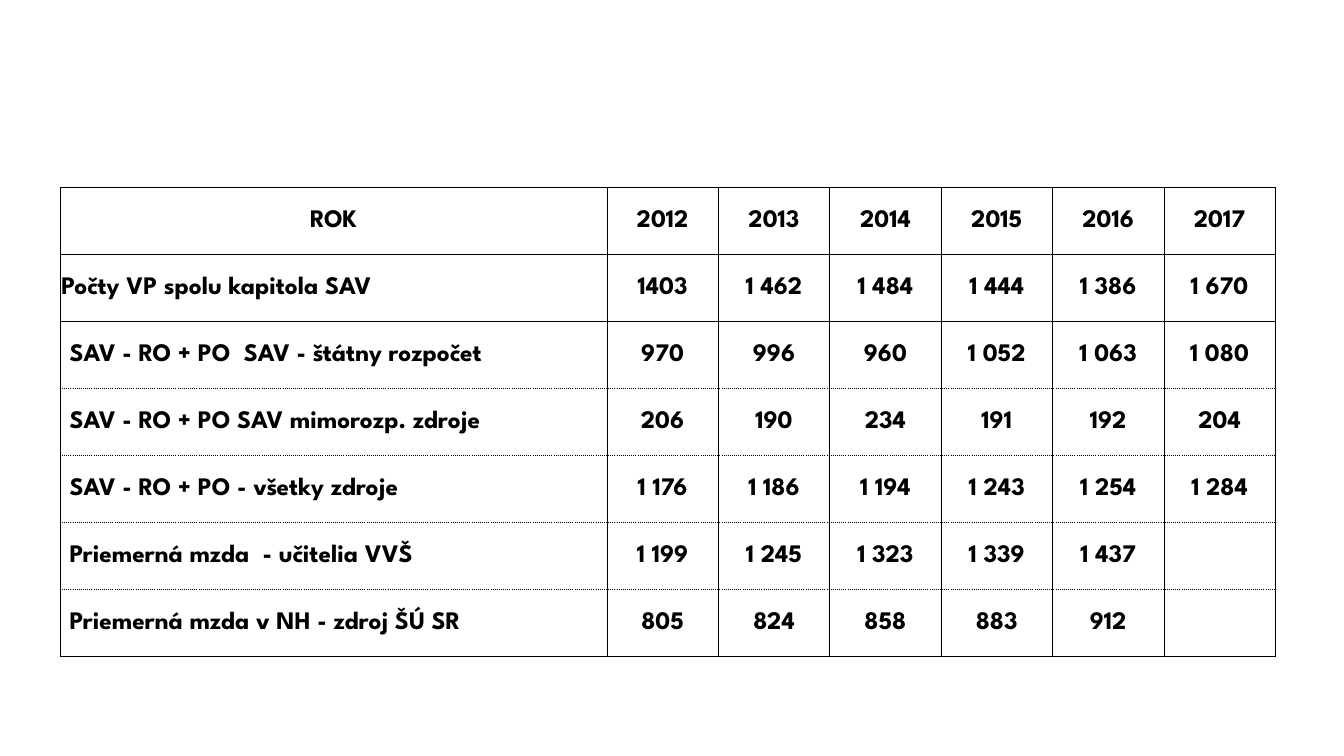
from lxml import etree
from pptx import Presentation
from pptx.dml.color import RGBColor
from pptx.enum.text import MSO_ANCHOR, PP_ALIGN
from pptx.oxml.ns import qn
from pptx.util import Inches, Pt

LEFT, CENTER = PP_ALIGN.LEFT, PP_ALIGN.CENTER
MIDDLE = MSO_ANCHOR.MIDDLE

BLACK, WHITE = "000000", "FFFFFF"
THICK, THIN, DOTTED = (1, "solid"), (0.5, "solid"), (0.5, "sysDot")

HEADER = ["ROK", "2012", "2013", "2014", "2015", "2016", "2017"]
TOTALS = ["Počty VP spolu kapitola SAV",
          "1403", "1 462", "1 484", "1 444", "1 386", "1 670"]
DETAILS = [
    ["SAV - RO + PO  SAV - štátny rozpočet",
     "970", "996", "960", "1 052", "1 063", "1 080"],
    ["SAV - RO + PO SAV mimorozp. zdroje",
     "206", "190", "234", "191", "192", "204"],
    ["SAV - RO + PO - všetky zdroje",
     "1 176", "1 186", "1 194", "1 243", "1 254", "1 284"],
    ["Priemerná mzda  - učitelia VVŠ",
     "1 199", "1 245", "1 323", "1 339", "1 437", ""],
    ["Priemerná mzda v NH - zdroj ŠÚ SR",
     "805", "824", "858", "883", "912", ""],
]


def color(hex_value):
    return RGBColor.from_string(hex_value)


def write_text(text_frame, text, *, font, size, bold, hex_value, align):
    paragraph = text_frame.paragraphs[0]
    paragraph.alignment = align
    paragraph.font.size = Pt(size)
    if text:
        run = paragraph.add_run()
        run.text = text
        run.font.name = font
        run.font.size = Pt(size)
        run.font.bold = bold
        run.font.color.rgb = color(hex_value)


class SlideBuilder:
    font = "League Spartan"
    size = 18
    margin = 0.01
    detail_indent = 0.08

    def __init__(self, presentation):
        self.slide = presentation.slides.add_slide(presentation.slide_layouts[6])
        background = self.slide.background.fill
        background.solid()
        background.fore_color.rgb = color(WHITE)

    def border(self, cell, side, style):
        width, dash = style
        properties = cell._tc.get_or_add_tcPr()
        line = etree.SubElement(properties, qn(f"a:ln{side}"), w=str(Pt(width)))
        fill = etree.SubElement(line, qn("a:solidFill"))
        etree.SubElement(fill, qn("a:srgbClr"), val=BLACK)
        etree.SubElement(line, qn("a:prstDash"), val=dash)

    def cell(self, cell, text, align, indent, borders):
        cell.vertical_anchor = MIDDLE
        cell.margin_left = Inches(self.margin + indent)
        cell.margin_right = cell.margin_top = Inches(self.margin)
        cell.margin_bottom = 0
        # Borders come before the fill in the cell properties
        for side, style in borders.items():
            self.border(cell, side, style)
        cell.fill.solid()
        cell.fill.fore_color.rgb = color(WHITE)
        write_text(cell.text_frame, text, font=self.font, size=self.size,
                   bold=True, hex_value=BLACK, align=align)

    def table(self, rows, left, top, width, height, label_width, solid_lines):
        row_count, column_count = len(rows), len(rows[0])
        table = self.slide.shapes.add_table(
            row_count, column_count, Inches(left), Inches(top),
            Inches(width), Inches(height)).table
        table.first_row = table.horz_banding = False

        # Label column, then equal year columns
        year_width = (width - label_width) / (column_count - 1)
        for index, column in enumerate(table.columns):
            column.width = Inches(year_width if index else label_width)
        for row in table.rows:
            row.height = Inches(height / row_count)

        # Outer frame is thick, the detail rows are divided by dots
        for row_index, values in enumerate(rows):
            for column_index, text in enumerate(values):
                is_label = column_index == 0
                is_detail = row_index > 1
                borders = {
                    "L": THICK if is_label else THIN,
                    "R": THICK if column_index == column_count - 1 else THIN,
                    "T": THICK if row_index in solid_lines else DOTTED,
                    "B": THICK if row_index + 1 in solid_lines else DOTTED,
                }
                self.cell(table.cell(row_index, column_index), text,
                          LEFT if is_label and row_index else CENTER,
                          self.detail_indent if is_label and is_detail else 0,
                          borders)


def main():
    presentation = Presentation()
    presentation.slide_width = Inches(13.33)
    presentation.slide_height = Inches(7.5)
    builder = SlideBuilder(presentation)
    rows = [HEADER, TOTALS, *DETAILS]
    builder.table(rows, left=0.6, top=1.86, width=12.05, height=4.65,
                  label_width=5.42, solid_lines={0, 1, 2, len(rows)})
    presentation.save("out.pptx")


if __name__ == "__main__":
    main()
